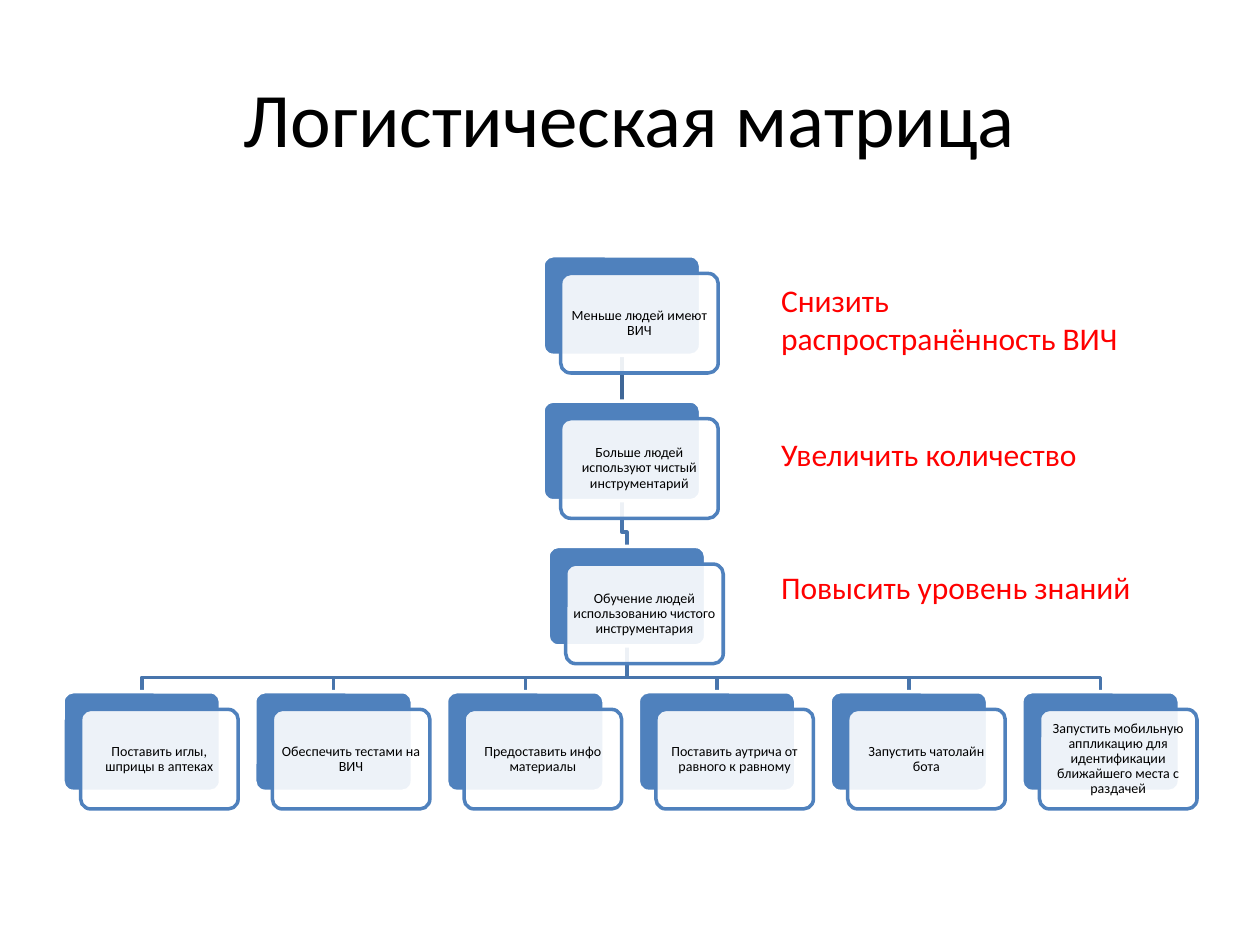
from dataclasses import dataclass

from lxml.etree import SubElement
from pptx import Presentation
from pptx.dml.color import RGBColor
from pptx.enum.shapes import MSO_CONNECTOR, MSO_SHAPE
from pptx.enum.text import MSO_ANCHOR, PP_ALIGN
from pptx.oxml.ns import qn
from pptx.util import Inches, Pt

COLORS = {
    "text": "000000",
    "goal": "FF0000",
    "card": "4F81BD",
    "paper": "FFFFFF",
    "trunk": "3F6797",
    "branch": "4875AC",
}
FONT = "Calibri"
CARD_WIDTH, CARD_HEIGHT = 1.25, 0.79
OFFSET = 0.14  # shift of the front card from the back one
TOP, LAST_TOP = 2.03, 5.49
LEVEL_STEP = (LAST_TOP - TOP) / 3
LEAF_LEFT, LAST_LEAF_LEFT = 0.5, 8.11
LEAF_STEP = (LAST_LEAF_LEFT - LEAF_LEFT) / 5
BEND = 0.25  # drop from a card to the bend of its branch


@dataclass
class Node:
    text: str
    left: float
    level: int

    @property
    def center(self) -> float:
        return self.left + CARD_WIDTH / 2

    @property
    def top(self) -> float:
        return TOP + self.level * LEVEL_STEP

    @property
    def bottom(self) -> float:
        return self.top + CARD_HEIGHT


@dataclass
class Label:
    text: str
    left: float
    top: float
    width: float
    height: float
    size: int
    color: str
    align: PP_ALIGN = PP_ALIGN.LEFT
    anchor: MSO_ANCHOR = MSO_ANCHOR.TOP


def rgb(name: str) -> RGBColor:
    return RGBColor.from_string(COLORS[name])


def write(frame, text: str, size: int, color: str, align: PP_ALIGN, anchor: MSO_ANCHOR):
    frame.word_wrap = True
    frame.vertical_anchor = anchor
    para = frame.paragraphs[0]
    para.text = text
    para.alignment = align
    para.font.name = FONT
    para.font.size = Pt(size)
    para.font.color.rgb = rgb(color)
    return para


def add_label(page, label: Label) -> None:
    box = page.shapes.add_textbox(
        Inches(label.left), Inches(label.top), Inches(label.width), Inches(label.height))
    write(box.text_frame, label.text, label.size, label.color, label.align, label.anchor)


def add_card(page, left: float, top: float, fill: str, line: str):
    card = page.shapes.add_shape(
        MSO_SHAPE.ROUNDED_RECTANGLE,
        Inches(left), Inches(top), Inches(CARD_WIDTH), Inches(CARD_HEIGHT))
    card.adjustments[0] = 0.1
    card.shadow.inherit = False
    card.fill.solid()
    card.fill.fore_color.rgb = rgb(fill)
    card.line.color.rgb = rgb(line)
    card.line.width = Pt(2)
    return card


def add_node(page, node: Node) -> None:
    add_card(page, node.left, node.top, "card", "paper")
    front = add_card(page, node.left + OFFSET, node.top + OFFSET, "paper", "card")
    # Front card lets the back one show through
    color = front._element.spPr.find(qn("a:solidFill")).find(qn("a:srgbClr"))
    SubElement(color, qn("a:alpha"), val="90000")
    frame = front.text_frame
    frame.margin_left = frame.margin_right = Inches(0.03)
    frame.margin_top = frame.margin_bottom = Inches(0.03)
    para = write(frame, node.text, 8, "text", PP_ALIGN.CENTER, MSO_ANCHOR.MIDDLE)
    para.line_spacing = 0.9


def add_link(page, parent: Node, child: Node) -> None:
    if parent.center == child.center:
        link = page.shapes.add_connector(
            MSO_CONNECTOR.STRAIGHT,
            Inches(parent.center), Inches(parent.bottom),
            Inches(child.center), Inches(child.top))
        SubElement(link._element.spPr, qn("a:effectLst"))
        color = "trunk"
    else:
        bend = parent.bottom + BEND
        points = [(parent.center, bend), (child.center, bend), (child.center, child.top)]
        builder = page.shapes.build_freeform(Inches(parent.center), Inches(parent.bottom))
        builder.add_line_segments([(Inches(x), Inches(y)) for x, y in points], close=False)
        link = builder.convert_to_shape()
        link.fill.background()
        link.shadow.inherit = False
        color = "branch"
    link.line.color.rgb = rgb(color)
    link.line.width = Pt(2)


def main() -> None:
    deck = Presentation()
    deck.slide_width, deck.slide_height = Inches(10), Inches(7.5)
    page = deck.slides.add_slide(deck.slide_layouts[6])

    # Title
    add_label(page, Label("Логистическая матрица", 0.5, 0.3, 9, 1.25, 44, "text",
                          PP_ALIGN.CENTER, MSO_ANCHOR.MIDDLE))

    # Tree: a chain of three results over a row of activities
    impact = Node("Меньше людей имеют ВИЧ", 4.31, 0)
    outcome = Node("Больше людей используют чистый инструментарий", 4.31, 1)
    output = Node("Обучение людей использованию чистого инструментария", 4.35, 2)
    activities = [
        Node(text, LEAF_LEFT + index * LEAF_STEP, 3)
        for index, text in enumerate([
            "Поставить иглы, шприцы в аптеках",
            "Обеспечить тестами на ВИЧ",
            "Предоставить инфо материалы",
            "Поставить аутрича от равного к равному",
            "Запустить чатолайн бота",
            "Запустить мобильную аппликацию для идентификации ближайшего места с раздачей",
        ])
    ]
    for activity in reversed(activities):
        add_link(page, output, activity)
    add_link(page, outcome, output)
    add_link(page, impact, outcome)
    for node in [impact, outcome, output, *activities]:
        add_node(page, node)

    # Goals beside the chain
    for text, top, height in [
        ("Снизить распространённость ВИЧ", 2.18, 0.71),
        ("Увеличить количество", 3.4, 0.4),
        ("Повысить уровень знаний", 4.46, 0.4),
    ]:
        add_label(page, Label(text, 6.1, top, 2.99, height, 18, "goal"))

    deck.save("out.pptx")


if __name__ == "__main__":
    main()
